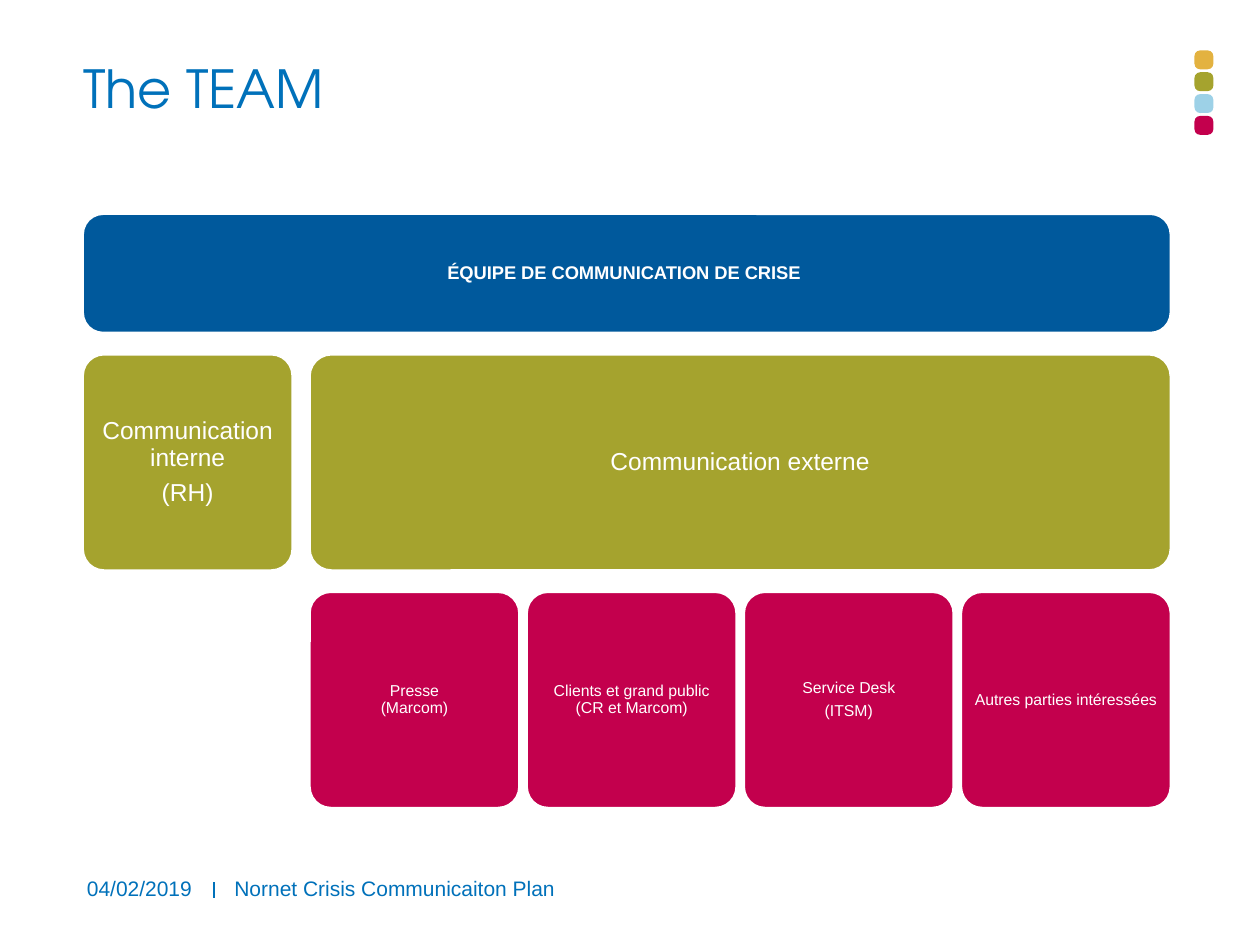
import copy

import pptx
import pptx.dml.color
import pptx.enum.shapes
import pptx.enum.text
import pptx.oxml
import pptx.oxml.ns
import pptx.util

BLUE, NAVY, OLIVE, CRIMSON, WHITE = "0071BA", "00599C", "A5A32E", "C3004D", "FFFFFF"
LOGO_DOTS = ["E3B240", OLIVE, "9DD1E7", CRIMSON]
SHAPES = pptx.enum.shapes.MSO_SHAPE
ALIGN = pptx.enum.text.PP_ALIGN
ANCHOR = pptx.enum.text.MSO_ANCHOR


def rgb(hex_color):
    return pptx.dml.color.RGBColor.from_string(hex_color)


def inches(*values):
    return [pptx.util.Inches(v) for v in values]


def write(sp, text, *, size, color, font="Arial", bold=False, align=ALIGN.LEFT,
          anchor=ANCHOR.TOP, inset=0, line_spacing=None, space_after=0):
    """Fill a shape with text: "\n" starts a paragraph, "\v" breaks a line."""
    tf = sp.text_frame
    tf.word_wrap = True
    tf.vertical_anchor = anchor
    tf.margin_left = tf.margin_right = tf.margin_top = tf.margin_bottom = pptx.util.Inches(inset)
    tf.text = text
    for p in tf.paragraphs:
        p.alignment = align
        p.line_spacing = line_spacing
        p.space_after = pptx.util.Pt(space_after)
        for r in p.runs:
            r.font.name = font
            r.font.size = pptx.util.Pt(size)
            r.font.bold = bold
            r.font.color.rgb = rgb(color)
        for br in p._p.findall(pptx.oxml.ns.qn("a:br")):
            br.append(copy.deepcopy(p.runs[0]._r.rPr))


def add_text(slide, box, text, **fmt):
    write(slide.shapes.add_textbox(*inches(*box)), text, **fmt)


def add_round_box(slide, box, fill, radius, outlined=False):
    sp = slide.shapes.add_shape(SHAPES.ROUNDED_RECTANGLE, *inches(*box))
    sp.adjustments[0] = radius
    sp.shadow.inherit = False
    sp.fill.solid()
    sp.fill.fore_color.rgb = rgb(fill)
    if outlined:
        sp.line.color.rgb = rgb(WHITE)
        sp.line.width = pptx.util.Pt(1)
    else:
        sp.line.fill.background()
    return sp


def add_team_box(slide, box, text, fill, size, inset, radius=0.1, bold=False):
    sp = add_round_box(slide, box, fill, radius, outlined=True)
    write(sp, text, size=size, color=WHITE, bold=bold, align=ALIGN.CENTER,
          anchor=ANCHOR.MIDDLE, inset=inset, line_spacing=0.9, space_after=0.35 * size)


def add_logo_dots(slide, left, top, height, dot=0.15):
    step = (height - dot) / (len(LOGO_DOTS) - 1)
    for i, color in enumerate(LOGO_DOTS):
        add_round_box(slide, (left, top + i * step, dot, dot), color, 0.3)


def add_team_chart(slide, left, top, width, height):
    head_h, row_h, col_w, branch_gap = 0.94, 1.71, 1.66, 0.14
    row_gap = (height - head_h - 2 * row_h) / 2
    branch_y = top + head_h + row_gap
    leaf_y = branch_y + row_h + row_gap
    ext_x = left + col_w + branch_gap
    ext_w = width - col_w - branch_gap

    add_team_box(slide, (left, top, width, head_h), "ÉQUIPE DE COMMUNICATION DE CRISE ",
                 NAVY, 10.5, 0.05, radius=0.17, bold=True)
    add_team_box(slide, (left, branch_y, col_w, row_h), "Communication interne\n(RH)",
                 OLIVE, 14, 0.06)
    add_team_box(slide, (ext_x, branch_y, ext_w, row_h), "Communication externe",
                 OLIVE, 14, 0.06)

    leaves = ["Presse\v(Marcom)", "Clients et grand public\v(CR et Marcom)",
              "Service Desk\n(ITSM)", "Autres parties intéressées"]
    step = (ext_w - col_w) / (len(leaves) - 1)
    for i, text in enumerate(leaves):
        add_team_box(slide, (ext_x + i * step, leaf_y, col_w, row_h), text, CRIMSON, 9, 0.04)


def add_footer(slide, left, top, height):
    add_text(slide, (left, top, 0.94, height), "04/02/2019", size=12, color=BLUE)
    add_text(slide, (left + 1.17, top, 3.38, height), "Nornet Crisis Communicaiton Plan",
             size=12, color=BLUE)
    x, y = left + 1.01, top + 0.05
    line = slide.shapes.add_connector(pptx.enum.shapes.MSO_CONNECTOR.STRAIGHT,
                                      *inches(x, y, x, y + 0.13))
    line.line.color.rgb = rgb(BLUE)
    line.line.width = pptx.util.Pt(1)
    line._element.spPr.append(pptx.oxml.parse_xml(
        '<a:effectLst xmlns:a="http://schemas.openxmlformats.org/drawingml/2006/main"/>'))


def main():
    prs = pptx.Presentation()
    prs.slide_width, prs.slide_height = inches(10, 7.5)
    slide = prs.slides.add_slide(prs.slide_layouts[6])
    add_logo_dots(slide, 9.48, 0.4, 0.67)
    add_text(slide, (0.66, 0.5, 8.62, 1.02), "The TEAM", size=30, color=BLUE,
             font="TeX Gyre Adventor", line_spacing=0.9)
    add_team_chart(slide, 0.66, 1.7, 8.63, 4.71)
    add_footer(slide, 0.69, 6.95, 0.28)
    prs.save("out.pptx")


if __name__ == "__main__":
    main()
